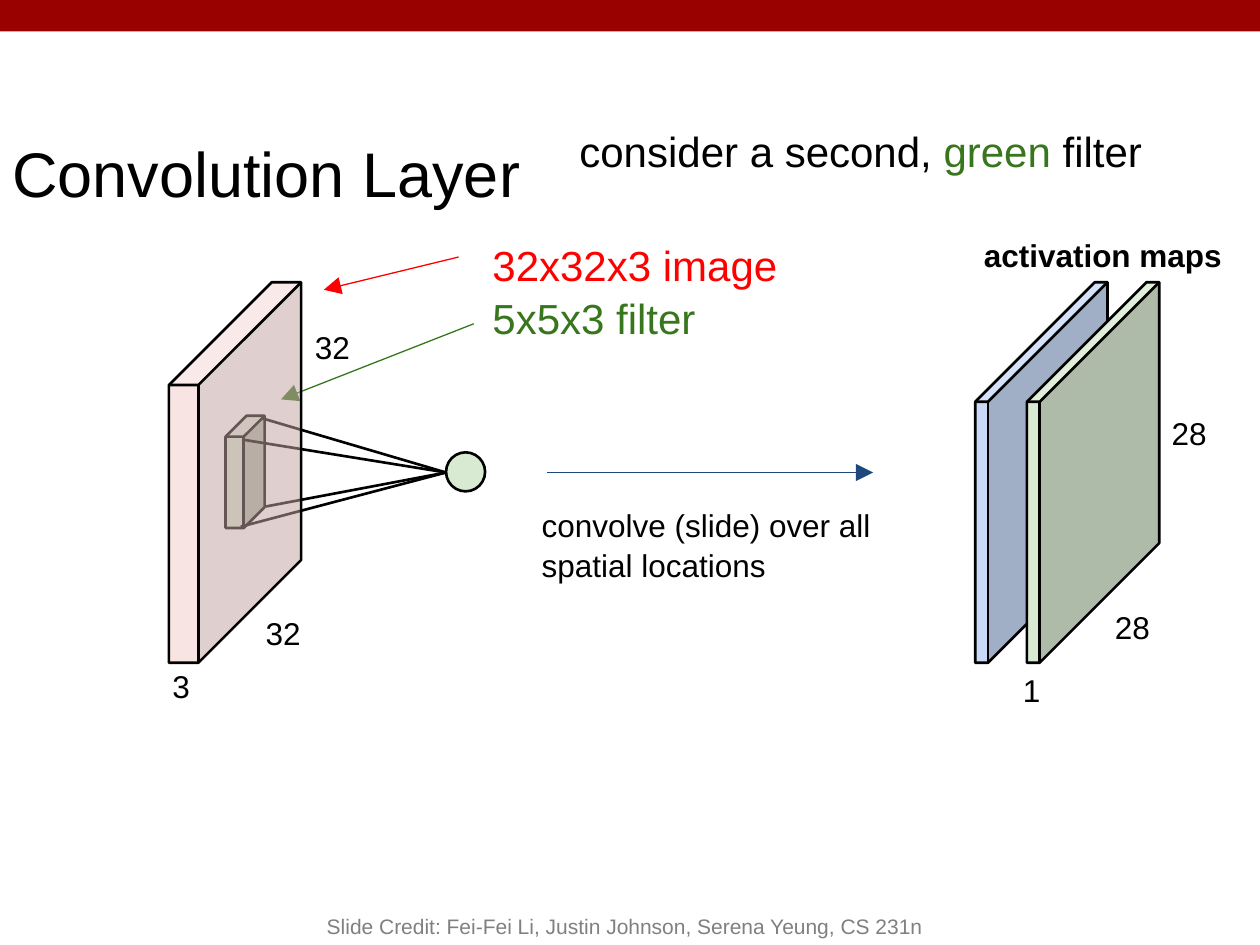
from lxml.etree import SubElement
from pptx import Presentation
from pptx.dml.color import RGBColor
from pptx.enum.shapes import MSO_CONNECTOR, MSO_SHAPE
from pptx.enum.text import MSO_ANCHOR, PP_ALIGN
from pptx.oxml.ns import qn
from pptx.util import Inches, Pt

BLACK = RGBColor(0, 0, 0)
GRAY = RGBColor(0x80, 0x80, 0x80)
MAROON = RGBColor(0x99, 0, 0)
RED = RGBColor(0xFF, 0, 0)
GREEN = RGBColor(0x38, 0x76, 0x1D)
NAVY = RGBColor(0x1F, 0x49, 0x7D)
MINT = RGBColor(0xD9, 0xEA, 0xD3)
SKY = RGBColor(0xC9, 0xDA, 0xF8)
PINK = RGBColor(0xF4, 0xCC, 0xCC)


def apply(obj, form):
    for name, value in form.items():
        setattr(obj, name, value)


def add_solid(slide, kind, box, fill, line=BLACK, depth=None, alpha=None):
    """Add a filled shape; depth is the cube adjustment, alpha a percentage."""
    shape = slide.shapes.add_shape(kind, *map(Inches, box))
    shape.shadow.inherit = False
    shape.fill.solid()
    shape.fill.fore_color.rgb = fill
    if line is None:
        shape.line.fill.background()
    else:
        shape.line.color.rgb = line
        shape.line.width = Pt(1.5)
    if depth is not None:
        shape.adjustments[0] = depth
    if alpha is not None:
        color = shape.fill._xPr.find(qn("a:solidFill"))[0]
        SubElement(color, qn("a:alpha"), val=str(alpha * 1000))


def add_line(slide, start, end, color=BLACK, width=1.5, arrow=False):
    line = slide.shapes.add_connector(
        MSO_CONNECTOR.STRAIGHT, *map(Inches, start + end))
    line.line.color.rgb = color
    line.line.width = Pt(width)
    if arrow:
        SubElement(line.line._get_or_add_ln(), qn("a:tailEnd"),
                   type="triangle", w="lg", len="lg")
    SubElement(line._element.spPr, qn("a:effectLst"))


def add_text(slide, box, paras, size=18, bold=False, inset=0.1,
             anchor=MSO_ANCHOR.TOP, align=PP_ALIGN.LEFT):
    """Add a text box; each paragraph is a list of (text, color) runs."""
    frame = slide.shapes.add_textbox(*map(Inches, box)).text_frame
    sides = ("left", "top", "right", "bottom")
    apply(frame, {f"margin_{side}": Inches(inset) for side in sides})
    apply(frame, {"word_wrap": True, "vertical_anchor": anchor})
    for i, runs in enumerate(paras):
        para = frame.add_paragraph() if i else frame.paragraphs[0]
        apply(para, {"alignment": align, "line_spacing": 1.05})
        for text, color in runs:
            run = para.add_run()
            run.text = text
            apply(run.font, {"name": "Arial", "size": Pt(size), "bold": bold})
            run.font.color.rgb = color


def main():
    deck = Presentation()
    apply(deck, {"slide_width": Inches(10), "slide_height": Inches(7.5)})
    slide = deck.slides.add_slide(deck.slide_layouts[6])

    # Top bar and headings
    add_solid(slide, MSO_SHAPE.RECTANGLE, (0, 0, 10, 0.25), MAROON, None)
    add_text(slide, (0, 0.94, 8.42, 0.72), [[("Convolution Layer", BLACK)]], 36)
    add_text(slide, (4.5, 0.88, 5.54, 0.31),
             [[("consider a second, ", BLACK), ("green ", GREEN),
               ("filter", BLACK)]], 24)

    # Filter and its output neuron
    add_solid(slide, MSO_SHAPE.CUBE, (1.79, 3.3, 0.31, 0.89), MINT, depth=0.534)
    add_solid(slide, MSO_SHAPE.OVAL, (3.54, 3.59, 0.31, 0.31), MINT)
    for corner in ((1.91, 4.18), (1.93, 3.49), (2.08, 3.32), (2.11, 4.02)):
        add_line(slide, corner, (3.54, 3.75))

    # Arrows
    for start, end, color in (
        ((3.64, 2.04), (2.57, 2.3), RED),
        ((3.76, 2.57), (2.23, 3.17), GREEN),
        ((4.34, 3.75), (6.93, 3.75), NAVY),
    ):
        add_line(slide, start, end, color, 0.75, True)

    # Activation maps, then the see-through input volume over the filter
    for left, fill, depth, alpha in (
        (7.74, SKY, 0.904, None),
        (8.15, MINT, 0.904, None),
        (1.34, PINK, 0.777, 52),
    ):
        add_solid(slide, MSO_SHAPE.CUBE, (left, 2.24, 1.05, 3.02), fill,
                  depth=depth, alpha=alpha)

    # Size labels
    for text, left, top in (
        ("32", 2.01, 4.76), ("32", 2.4, 2.49), ("3", 1.27, 5.18),
        ("1", 8.02, 5.21), ("28", 8.75, 4.71), ("28", 9.2, 3.17),
    ):
        add_text(slide, (left, top, 0.54, 0.34), [[(text, BLACK)]])

    # Captions
    add_text(slide, (3.81, 1.78, 3.98, 0.6),
             [[("32x32x3 image", RED)], [("5x5x3 filter", GREEN)]], 24)
    add_text(slide, (4.2, 3.9, 3.58, 0.89),
             [[("convolve (slide) over all spatial locations", BLACK)]])
    add_text(slide, (7.71, 1.76, 2.26, 0.59),
             [[("activation maps", BLACK)]], bold=True)

    # Credit line
    credit = "Slide Credit: Fei-Fei Li, Justin Johnson, Serena Yeung, CS 231n"
    add_text(slide, (2, 7, 5.92, 0.5), [[(credit, GRAY)]], 12, inset=0.05,
             anchor=MSO_ANCHOR.BOTTOM, align=PP_ALIGN.CENTER)

    deck.save("out.pptx")


if __name__ == "__main__":
    main()
